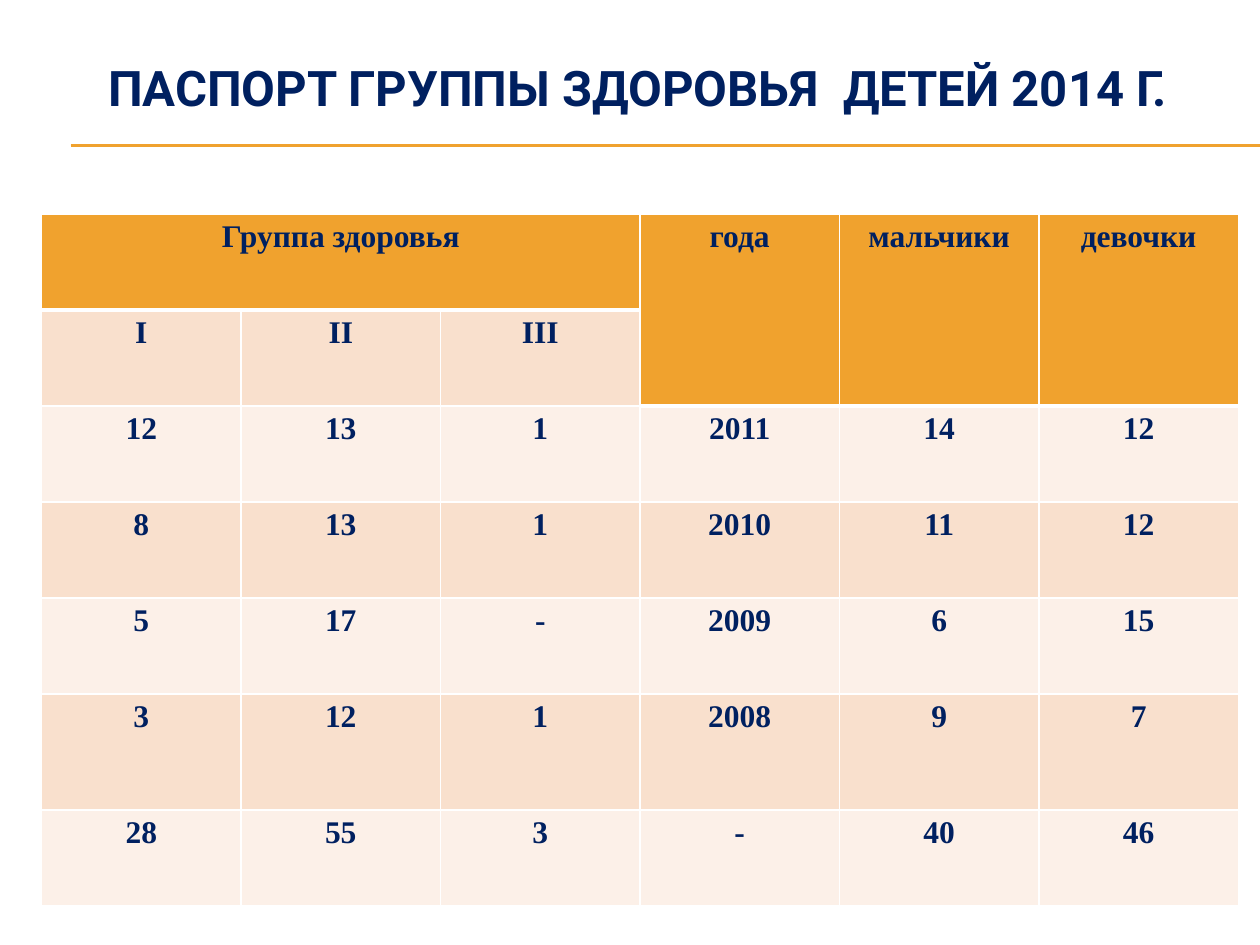
from lxml import etree
from pptx import Presentation
from pptx.dml.color import RGBColor
from pptx.enum.shapes import MSO_CONNECTOR
from pptx.enum.text import MSO_ANCHOR, PP_ALIGN
from pptx.oxml.ns import qn
from pptx.util import Inches, Pt

STRAIGHT = MSO_CONNECTOR.STRAIGHT
MIDDLE = MSO_ANCHOR.MIDDLE
CENTER = PP_ALIGN.CENTER

COLORS = {
    "text": "002060",
    "accent": "F0A22E",
    "band_dark": "F9E0CD",
    "band_light": "FCF0E8",
    "border": "FFFFFF",
}

TITLE = "ПАСПОРТ ГРУППЫ ЗДОРОВЬЯ  ДЕТЕЙ 2014 Г."
HEALTH_ROWS = [
    ["Группа здоровья", "", "", "года", "мальчики", "девочки"],
    ["I", "II", "III", "", "", ""],
    ["12", "13", "1", "2011", "14", "12"],
    ["8", "13", "1", "2010", "11", "12"],
    ["5", "17", "-", "2009", "6", "15"],
    ["3", "12", "1", "2008", "9", "7"],
    ["28", "55", "3", "-", "40", "46"],
]
GROUP_COLUMNS = 3
TALL_ROW, TALL_EXTRA = 5, 0.16


def color(name):
    return RGBColor.from_string(COLORS[name])


def write_text(frame, text, *, font, size, line_spacing=1.0):
    paragraph = frame.paragraphs[0]
    paragraph.alignment = CENTER
    paragraph.line_spacing = line_spacing
    run = paragraph.add_run()
    run.text = text
    run.font.name = font
    run.font.size = Pt(size)
    run.font.bold = True
    run.font.color.rgb = color("text")


def set_borders(cell, bottom_width):
    """Border lines come before the fill in the cell properties."""
    properties = cell._tc.get_or_add_tcPr()
    widths = {"a:lnL": 1, "a:lnR": 1, "a:lnT": 1, "a:lnB": bottom_width}
    for position, (tag, width) in enumerate(widths.items()):
        line = etree.Element(qn(tag), w=str(Pt(width)))
        fill = etree.SubElement(line, qn("a:solidFill"))
        etree.SubElement(fill, qn("a:srgbClr"), val=COLORS["border"])
        properties.insert(position, line)


def add_title(slide, left, top, width, height):
    title = slide.shapes.add_textbox(
        Inches(left), Inches(top), Inches(width), Inches(height))
    frame = title.text_frame
    frame.word_wrap = True
    frame.vertical_anchor = MIDDLE
    write_text(frame, TITLE, font="Roboto", size=28)


def add_title_rule(slide, left, top, width, gap):
    # Two hairlines lying side by side
    for y in (top, top + gap):
        rule = slide.shapes.add_connector(
            STRAIGHT, Inches(left), Inches(y), Inches(left + width), Inches(y))
        rule.line.color.rgb = color("accent")
        rule.line.width = Pt(0.75)
        etree.SubElement(rule._element.spPr, qn("a:effectLst"))


def add_health_table(slide, left, top, width, height):
    row_count, column_count = len(HEALTH_ROWS), len(HEALTH_ROWS[0])
    table = slide.shapes.add_table(
        row_count, column_count,
        Inches(left), Inches(top), Inches(width), Inches(height)).table
    table.horz_banding = False

    # Equal columns, equal rows apart from one taller row
    for column in table.columns:
        column.width = Inches(width / column_count)
    row_height = (height - TALL_EXTRA) / row_count
    for index, row in enumerate(table.rows):
        row.height = Inches(row_height + TALL_EXTRA * (index == TALL_ROW))

    # Header merges
    table.cell(0, 0).merge(table.cell(0, GROUP_COLUMNS - 1))
    for c in range(GROUP_COLUMNS, column_count):
        table.cell(0, c).merge(table.cell(1, c))

    # Cells
    for r, values in enumerate(HEALTH_ROWS):
        band = "band_dark" if r % 2 else "band_light"
        for c, value in enumerate(values):
            cell = table.cell(r, c)
            is_header = r == 0 or (r == 1 and c >= GROUP_COLUMNS)
            cell.fill.solid()
            cell.fill.fore_color.rgb = color("accent" if is_header else band)
            cell.margin_left = cell.margin_right = Inches(0.07)
            cell.margin_top = cell.margin_bottom = 0
            set_borders(cell, bottom_width=3 if is_header else 1)
            if value:
                write_text(cell.text_frame, value, font="Times New Roman",
                           size=18, line_spacing=1.15)


def main():
    presentation = Presentation()
    presentation.slide_width = Inches(10)
    presentation.slide_height = Inches(7.5)
    slide = presentation.slides.add_slide(presentation.slide_layouts[6])
    add_title_rule(slide, 0.56, 1.15, 9.44, gap=0.01)
    add_title(slide, 0.31, 0.23, 9.5, 0.92)
    add_health_table(slide, 0.33, 1.7, 9.5, 5.49)
    presentation.save("out.pptx")


if __name__ == "__main__":
    main()
